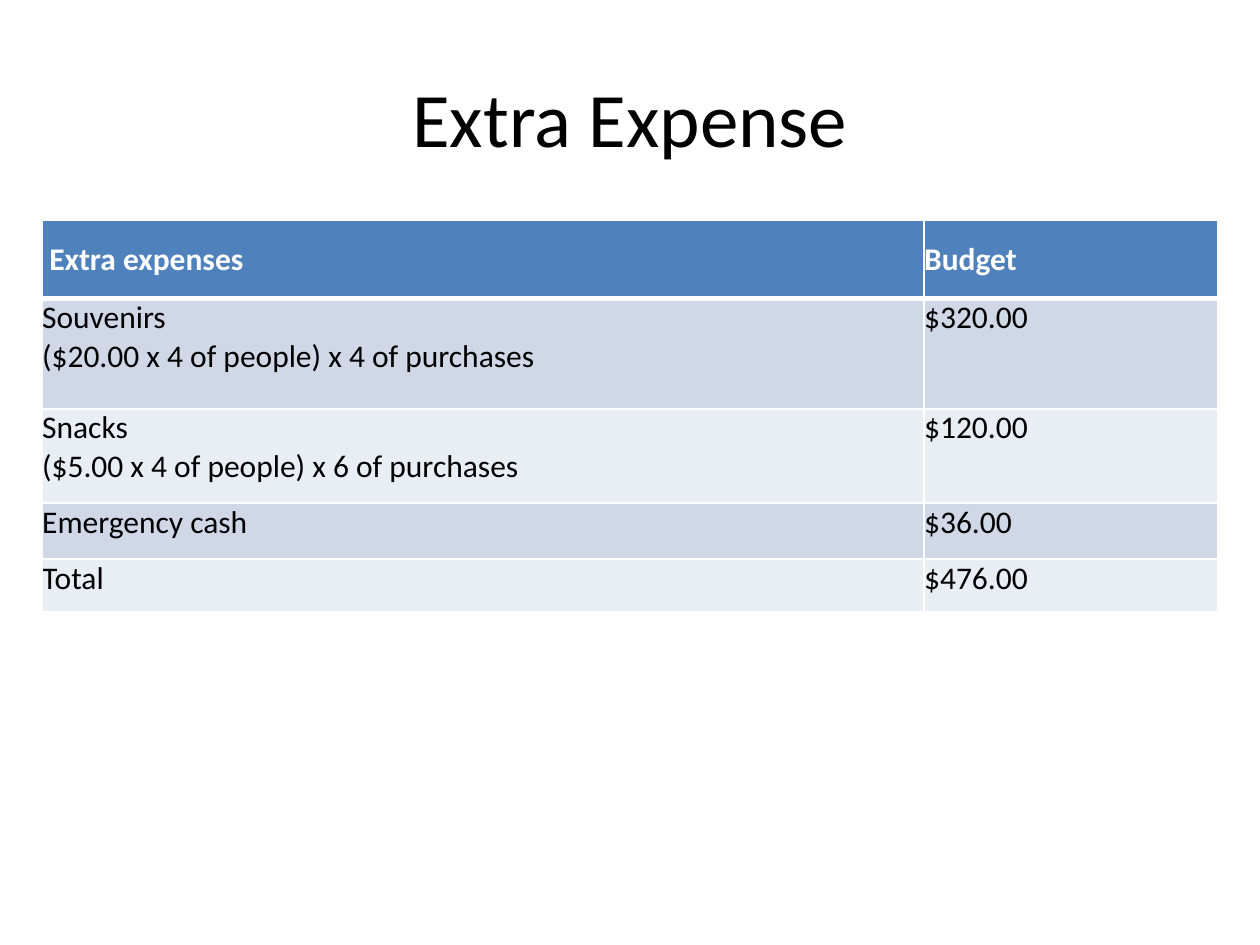
from dataclasses import dataclass

from lxml.etree import SubElement as Sub
from pptx import Presentation
from pptx.dml.color import RGBColor as Rgb
from pptx.enum.text import MSO_ANCHOR as Anchor, PP_ALIGN as Align
from pptx.oxml.ns import qn
from pptx.slide import Slide
from pptx.table import Table, _Cell as Cell
from pptx.text.text import TextFrame as Frame
from pptx.util import Cm, Pt

FONT = "Calibri"
HUES = {
    "head": "4F81BD",
    "odd": "D0D8E8",
    "even": "E9EDF4",
    "white": "FFFFFF",
    "black": "000000",
}
WIDTHS = (17.78, 5.92)


@dataclass
class Row:
    item: str
    cost: str
    high: float


ROWS = [
    Row(" Extra expenses", "Budget", 1.57),
    Row("Souvenirs\n($20.00 x 4 of people) x 4 of purchases", "$320.00", 2.22),
    Row("Snacks\n($5.00 x 4 of people) x 6 of purchases", "$120.00", 1.9),
    Row("Emergency cash", "$36.00", 1.13),
    Row("Total", "$476.00", 1.06),
]


def write(frame: Frame, text: str, size: int, hue: str, bold: bool = False) -> None:
    frame.text = text
    for para in frame.paragraphs:
        para.font.name = FONT
        para.font.size = Pt(size)
        para.font.bold = bold
        para.font.color.rgb = Rgb.from_string(HUES[hue])


def edge(cell: Cell, side: str, width: int) -> None:
    line = Sub(cell._tc.get_or_add_tcPr(), qn(f"a:ln{side}"), w=str(Pt(width)))
    Sub(Sub(line, qn("a:solidFill")), qn("a:srgbClr"), val=HUES["white"])


def paint(cell: Cell, text: str, rank: int) -> None:
    head = rank == 0
    write(cell.text_frame, text, 18, "white" if head else "black", head)
    cell.margin_left = cell.margin_right = Cm(0)
    cell.margin_top = cell.margin_bottom = Cm(0)
    cell.vertical_anchor = Anchor.MIDDLE if head else Anchor.TOP
    thick = {"T": 1, "B": 0}
    for side in "LRTB":
        edge(cell, side, 3 if thick.get(side) == rank else 1)
    cell.fill.solid()
    tone = "head" if head else "odd" if rank % 2 else "even"
    cell.fill.fore_color.rgb = Rgb.from_string(HUES[tone])


def add_title(slide: Slide, text: str) -> None:
    box = slide.shapes.add_textbox(Cm(1.27), Cm(0.76), Cm(22.86), Cm(3.18))
    frame = box.text_frame
    frame.word_wrap = True
    frame.vertical_anchor = Anchor.MIDDLE
    write(frame, text, 44, "black")
    frame.paragraphs[0].alignment = Align.CENTER


def add_costs(slide: Slide, rows: list[Row]) -> None:
    high = sum(row.high for row in rows)
    table: Table = slide.shapes.add_table(
        len(rows), len(WIDTHS), Cm(0.85), Cm(4.45), Cm(sum(WIDTHS)), Cm(high)
    ).table
    for col, width in zip(table.columns, WIDTHS):
        col.width = Cm(width)
    for rank, row in enumerate(rows):
        table.rows[rank].height = Cm(row.high)
        for spot, text in enumerate((row.item, row.cost)):
            paint(table.cell(rank, spot), text, rank)


def main() -> None:
    deck = Presentation()
    deck.slide_width, deck.slide_height = Cm(25.4), Cm(19.05)
    slide = deck.slides.add_slide(deck.slide_layouts[6])
    add_title(slide, "Extra Expense")
    add_costs(slide, ROWS)
    deck.save("out.pptx")


if __name__ == "__main__":
    main()
